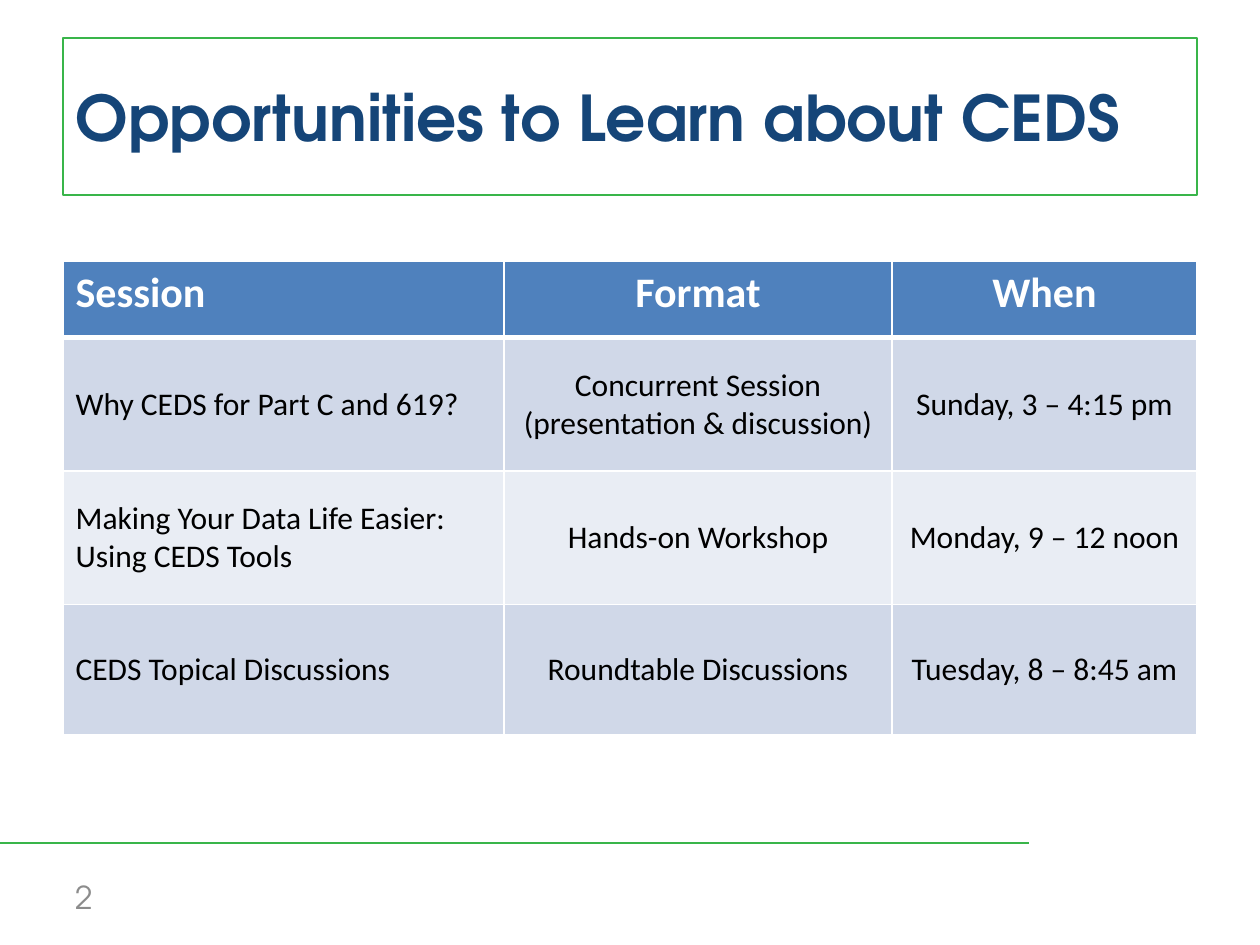
from lxml import etree
from pptx import Presentation
from pptx.dml.color import RGBColor
from pptx.enum.shapes import MSO_CONNECTOR, MSO_SHAPE
from pptx.enum.text import MSO_ANCHOR, PP_ALIGN
from pptx.oxml.ns import qn
from pptx.util import Inches, Pt

LEFT, CENTER = PP_ALIGN.LEFT, PP_ALIGN.CENTER
TOP, MIDDLE = MSO_ANCHOR.TOP, MSO_ANCHOR.MIDDLE
STRAIGHT, RECTANGLE = MSO_CONNECTOR.STRAIGHT, MSO_SHAPE.RECTANGLE

GRID = 0.5  # inches per grid column and row
COLORS = {
    "green": "39B54A",
    "navy": "154578",
    "gray": "8C8C8C",
    "header": "4F81BD",
    "dark_band": "D0D8E8",
    "light_band": "E9EDF4",
    "white": "FFFFFF",
    "black": "000000",
}
HEADING_FONT, TABLE_FONT = "TeX Gyre Adventor", "Calibri"

SESSIONS = [
    ("Session", "Format", "When"),
    ("Why CEDS for Part C and 619?",
     "Concurrent Session (presentation & discussion)", "Sunday, 3 – 4:15 pm"),
    ("Making Your Data Life Easier: Using CEDS Tools",
     "Hands-on Workshop", "Monday, 9 – 12 noon"),
    ("CEDS Topical Discussions", "Roundtable Discussions", "Tuesday, 8 – 8:45 am"),
]


def grid(*values):
    """Convert grid units to lengths."""
    return [Inches(value * GRID) for value in values]


def rgb(name):
    return RGBColor.from_string(COLORS[name])


class SlideBuilder:
    def __init__(self, slide):
        self.slide = slide

    def set_text(self, frame, text, font_name, size, color, bold=False, align=LEFT):
        frame.word_wrap = True
        paragraph = frame.paragraphs[0]
        paragraph.text = text
        paragraph.alignment = align
        font = paragraph.font
        font.name, font.size, font.bold = font_name, Pt(size), bold
        font.color.rgb = rgb(color)

    def rule(self, start, end):
        line = self.slide.shapes.add_connector(STRAIGHT, *grid(*start, *end))
        line.line.color.rgb = rgb("green")
        line.line.width = Pt(1.5)
        etree.SubElement(line._element.spPr, qn("a:effectLst"))

    def title(self, text, box):
        shape = self.slide.shapes.add_shape(RECTANGLE, *grid(*box))
        shape.shadow.inherit = False
        shape.fill.background()
        shape.line.color.rgb = rgb("green")
        shape.line.width = Pt(1)
        shape.text_frame.vertical_anchor = MIDDLE
        self.set_text(shape.text_frame, text, HEADING_FONT, 36, "navy", bold=True)

    def page_number(self, text, box):
        frame = self.slide.shapes.add_textbox(*grid(*box)).text_frame
        frame.vertical_anchor = MIDDLE
        self.set_text(frame, text, HEADING_FONT, 18, "gray")

    def cell_borders(self, cell, **widths):
        """Draw white borders; widths are points keyed by side (L, R, T, B)."""
        properties = cell._tc.get_or_add_tcPr()
        for index, (side, width) in enumerate(widths.items()):
            border = etree.Element(qn(f"a:ln{side}"), w=str(Pt(width)))
            fill = etree.SubElement(border, qn("a:solidFill"))
            etree.SubElement(fill, qn("a:srgbClr"), val=COLORS["white"])
            properties.insert(index, border)

    def table(self, rows, box, column_widths, row_heights):
        table = self.slide.shapes.add_table(
            len(rows), len(column_widths), *grid(*box)).table
        for column, width in zip(table.columns, grid(*column_widths)):
            column.width = width
        for row, height in zip(table.rows, grid(*row_heights)):
            row.height = height
        for row_index, texts in enumerate(rows):
            header = row_index == 0
            band = "dark_band" if row_index % 2 else "light_band"
            for column_index, text in enumerate(texts):
                cell = table.cell(row_index, column_index)
                cell.fill.solid()
                cell.fill.fore_color.rgb = rgb("header" if header else band)
                cell.vertical_anchor = TOP if header else MIDDLE
                self.cell_borders(cell, L=1, R=1, T=3 if row_index == 1 else 1,
                                  B=3 if header else 1)
                self.set_text(cell.text_frame, text, TABLE_FONT,
                              24 if header else 18, "white" if header else "black",
                              bold=header, align=CENTER if column_index else LEFT)


def main():
    presentation = Presentation()
    presentation.slide_width, presentation.slide_height = grid(20, 15)
    builder = SlideBuilder(
        presentation.slides.add_slide(presentation.slide_layouts[6]))

    builder.rule((0, 13.38), (16.34, 13.38))
    builder.page_number("2", (1, 13.84, 4.66, 0.8))
    builder.table(SESSIONS, (1, 4.14, 18, 7.52),
                  column_widths=(7, 6.16, 4.84),
                  row_heights=(1.22, 2.12, 2.12, 2.06))
    builder.title("Opportunities to Learn about CEDS", (1, 0.6, 18, 2.5))

    presentation.save("out.pptx")


if __name__ == "__main__":
    main()
